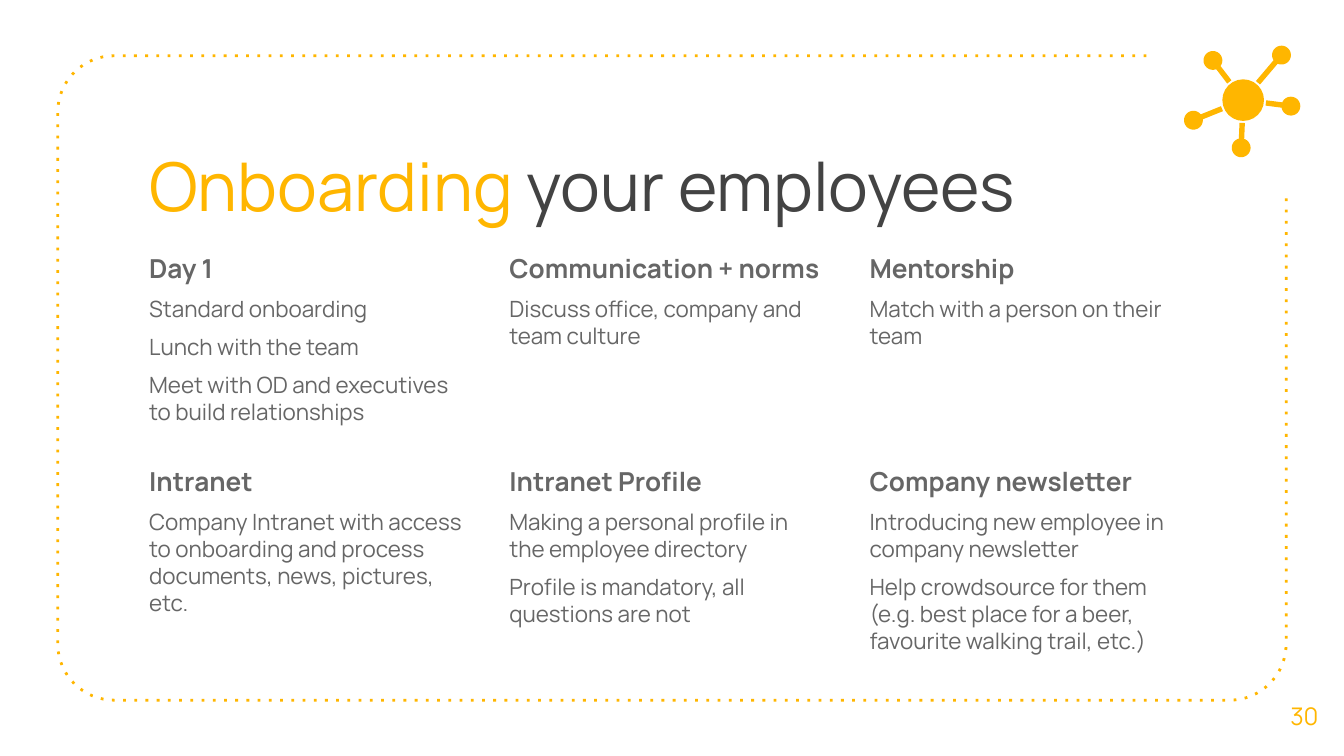
"""Build the onboarding slide: dotted frame, network icon, title and six topics."""
import copy
import math
from dataclasses import dataclass

from pptx import Presentation
from pptx import util as u
from pptx.dml.color import RGBColor
from pptx.enum import dml, shapes, text
from pptx.oxml.ns import qn
from lxml import etree

PX = 4572


@dataclass(frozen=True)
class Theme:
    font: str = "Manrope"
    accent: str = "FFB600"
    dark: str = "434343"
    body: str = "666666"
    title_size: int = 36
    heading_size: int = 14
    body_size: int = 12
    number_size: int = 13
    line_width: float = 1.5


THEME = Theme()

TOPICS = [
    ("Day 1", ["Standard onboarding", "Lunch with the team",
               "Meet with OD and executives to build relationships"]),
    ("Communication + norms", ["Discuss office, company and team culture"]),
    ("Mentorship", ["Match with a person on their team"]),
    ("Intranet", ["Company Intranet with access to onboarding and process "
                  "documents, news, pictures, etc."]),
    ("Intranet Profile", ["Making a personal profile in the employee directory",
                          "Profile is mandatory, all questions are not"]),
    ("Company newsletter", ["Introducing new employee in company newsletter",
                            "Help crowdsource for them (e.g. best place for a beer, "
                            "favourite walking trail, etc.)"]),
]


def px(value):
    return u.Emu(round(value * PX))


def color(code):
    return RGBColor.from_string(code)


def place(box, left, top, width, height):
    box.left, box.top, box.width, box.height = map(px, (left, top, width, height))


def set_frame(box, anchor):
    frame = box.text_frame
    frame.word_wrap = True
    frame.auto_size = text.MSO_AUTO_SIZE.NONE
    frame.vertical_anchor = anchor
    frame.margin_left = frame.margin_right = px(20)
    frame.margin_top = frame.margin_bottom = px(20)
    return frame


def add_span(para, words, size, code, bold=False):
    span = para.add_run()
    span.text = words
    span.font.name = THEME.font
    span.font.size = u.Pt(size)
    span.font.bold = bold
    span.font.color.rgb = color(code)


def arc(cx, cy, radius, start, end, steps):
    angles = [start + (end - start) * step / steps for step in range(steps + 1)]
    return [(cx + radius * math.cos(a), cy + radius * math.sin(a)) for a in angles]


def add_outline(parent, points, close):
    spots = [(px(x), px(y)) for x, y in points]
    builder = parent.build_freeform(*spots[0], scale=1.0)
    builder.add_line_segments(spots[1:], close=close)
    shape = builder.convert_to_shape()
    shape.shadow.inherit = False
    return shape


def fill_accent(shape):
    shape.shadow.inherit = False
    shape.fill.solid()
    shape.fill.fore_color.rgb = color(THEME.accent)
    shape.line.fill.background()


def add_dotted_frame(slide):
    left, top, right, bottom, radius = 86, 83, 1914, 1042, 84
    quarter = math.pi / 2
    corners = [(left + radius, top + radius, 3), (left + radius, bottom - radius, 2),
               (right - radius, bottom - radius, 1)]
    points = [(1706, top)]
    for cx, cy, turn in corners:
        points += arc(cx, cy, radius, turn * quarter, (turn - 1) * quarter, 16)
    points.append((right, 292))
    shape = add_outline(slide.shapes, points, close=False)
    shape.fill.background()
    shape.line.color.rgb = color(THEME.accent)
    shape.line.width = u.Pt(THEME.line_width)
    shape.line.dash_style = dml.MSO_LINE.ROUND_DOT
    shape.element.find(".//" + qn("a:prstDash")).set("val", "dot")


def add_network_icon(slide):
    hub_x, hub_y, hub_radius, gap, radius, half_stem = 1850, 149, 31, 34, 14, 4
    icon = slide.shapes.add_group_shape().shapes
    for x, y in [(1907, 82), (1805, 90), (1776, 179), (1847, 220), (1921, 158)]:
        angle = math.atan2(hub_y - y, hub_x - x)
        spread = math.asin(half_stem / radius)
        tip_x = hub_x - gap * math.cos(angle)
        tip_y = hub_y - gap * math.sin(angle)
        side_x, side_y = half_stem * math.sin(angle), half_stem * math.cos(angle)
        node = arc(x, y, radius, angle + spread, angle + 2 * math.pi - spread, 40)
        stem = [(tip_x + side_x, tip_y - side_y), (tip_x - side_x, tip_y + side_y)]
        fill_accent(add_outline(icon, node + stem, close=True))
    hub = icon.add_shape(shapes.MSO_SHAPE.OVAL, 0, 0, 0, 0)
    place(hub, hub_x - hub_radius, hub_y - hub_radius, 2 * hub_radius, 2 * hub_radius)
    fill_accent(hub)


def fill_title(box):
    place(box, 202, 195, 1502, 188)
    para = set_frame(box, text.MSO_ANCHOR.TOP).paragraphs[0]
    para.alignment = text.PP_ALIGN.LEFT
    add_span(para, "Onboarding", THEME.title_size, THEME.accent)
    add_span(para, " your employees", THEME.title_size, THEME.dark)


def fill_topic(box, index, heading, items):
    row, column = divmod(index, 3)
    place(box, 202 + 536 * column, 356 + 317 * row, 510, 324)
    frame = set_frame(box, text.MSO_ANCHOR.TOP)
    for number, words in enumerate([heading, *items]):
        para = frame.add_paragraph() if number else frame.paragraphs[0]
        para.space_before = u.Pt(6)
        props = para._p.get_or_add_pPr()
        props.set("marL", "0")
        props.set("indent", "0")
        etree.SubElement(props, qn("a:buNone"))
        size = THEME.body_size if number else THEME.heading_size
        add_span(para, words, size, THEME.body, bold=number == 0)


def add_page_number(slide, number):
    box = slide.shapes.add_textbox(px(1882), px(1005), px(118), px(120))
    para = set_frame(box, text.MSO_ANCHOR.MIDDLE).paragraphs[0]
    para.alignment = text.PP_ALIGN.CENTER
    add_span(para, number, THEME.number_size, THEME.accent)


def extend_layout(layout, count):
    body = next(box for box in layout.placeholders if box.placeholder_format.idx == 1)
    for index in range(20, 20 + count - 1):
        twin = copy.deepcopy(body.element)
        twin.find(".//" + qn("p:ph")).set("idx", str(index))
        twin.find(".//" + qn("p:cNvPr")).set("id", str(index))
        layout.shapes.element.append(twin)


def main():
    deck = Presentation()
    deck.slide_width, deck.slide_height = px(2000), px(1125)
    layout = deck.slide_layouts[1]
    extend_layout(layout, len(TOPICS))
    slide = deck.slides.add_slide(layout)
    title, *bodies = slide.placeholders
    add_dotted_frame(slide)
    fill_title(title)
    for index, (box, topic) in enumerate(zip(bodies, TOPICS)):
        fill_topic(box, index, *topic)
    add_page_number(slide, "30")
    add_network_icon(slide)
    deck.save("out.pptx")


if __name__ == "__main__":
    main()
